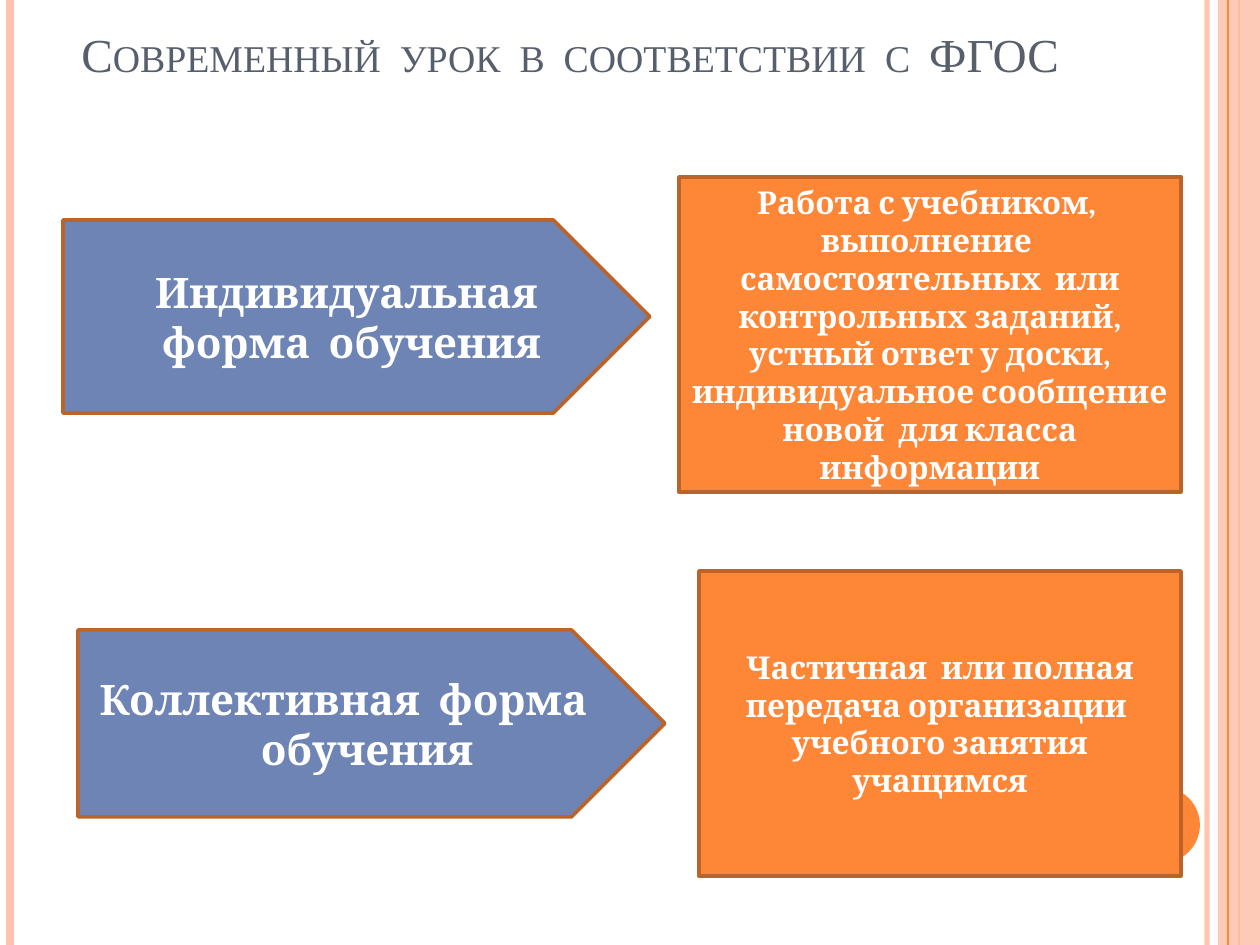
import pptx
import pptx.dml.color
import pptx.enum.shapes
import pptx.enum.text
import pptx.oxml.ns
import pptx.util
from lxml import etree

EMU_PER_PX = 914400 / 126
WIDTH, HEIGHT = 1260, 945
SHAPES = pptx.enum.shapes.MSO_SHAPE
ANCHORS = pptx.enum.text.MSO_ANCHOR
ALIGNMENTS = pptx.enum.text.PP_ALIGN


def px(length):
    return pptx.util.Emu(round(length * EMU_PER_PX))


def color(value):
    return pptx.dml.color.RGBColor.from_string(value)


def add_element(parent, tag, **attributes):
    return etree.SubElement(parent, pptx.oxml.ns.qn(tag), attributes)


def set_alpha(fill_parent, percent):
    """Make the solid fill found below an element partly transparent."""
    rgb = fill_parent.find(".//" + pptx.oxml.ns.qn("a:srgbClr"))
    add_element(rgb, "a:alpha", val=str(percent * 1000))


class SlideBuilder:
    ORANGE, PEACH, BLUE = "FE8637", "FEC3AE", "6E84B4"
    BORDER, WHITE, TITLE = "BC6329", "FFFFFF", "575F6D"
    BODY_FONT, TITLE_FONT = "Cambria", "Times New Roman"

    def __init__(self, slide):
        self.slide = slide

    def vertical_line(self, x, value, width, alpha=None):
        line = self.slide.shapes.add_connector(
            pptx.enum.shapes.MSO_CONNECTOR.STRAIGHT, px(x), 0, px(x), px(HEIGHT))
        line.line.color.rgb = color(value)
        line.line.width = pptx.util.Pt(width)
        properties = line._element.spPr
        if alpha:
            set_alpha(properties, alpha)
        add_element(properties, "a:effectLst")

    def shape(self, kind, box, fill, border=None, alpha=None):
        shape = self.slide.shapes.add_shape(kind, *map(px, box))
        shape.shadow.inherit = False
        shape.fill.solid()
        shape.fill.fore_color.rgb = color(fill)
        if alpha:
            set_alpha(shape._element.spPr, alpha)
        if border:
            shape.line.color.rgb = color(border)
            shape.line.width = pptx.util.Pt(2)
        else:
            shape.line.fill.background()
        return shape

    def fill_text(self, shape, text, value, anchor, alignment, **font_format):
        frame = shape.text_frame
        frame.word_wrap = True
        frame.vertical_anchor = anchor
        paragraph = frame.paragraphs[0]
        paragraph.alignment = alignment
        run = paragraph.add_run()
        run.text = text
        for name, setting in font_format.items():
            setattr(run.font, name, setting)
        run.font.color.rgb = color(value)
        return paragraph, run

    def title(self, box, text):
        text_box = self.slide.shapes.add_textbox(*map(px, box))
        _, run = self.fill_text(text_box, text, self.TITLE, ANCHORS.BOTTOM, ALIGNMENTS.LEFT,
                                name=self.TITLE_FONT, size=pptx.util.Pt(27))
        run.font._element.set("cap", "small")

    def panel(self, kind, box, fill, text, size):
        shape = self.shape(kind, box, fill, self.BORDER)
        paragraph, _ = self.fill_text(
            shape, text, self.WHITE, ANCHORS.MIDDLE, ALIGNMENTS.CENTER,
            name=self.BODY_FONT, size=pptx.util.Pt(size), bold=True)
        return paragraph

    def form_arrow(self, box, text, first_indent):
        paragraph = self.panel(SHAPES.PENTAGON, box, self.BLUE, text, 24)
        properties = paragraph._p.get_or_add_pPr()
        properties.set("marL", str(px(38)))
        properties.set("indent", str(px(first_indent)))

    def description(self, box, text):
        self.panel(SHAPES.RECTANGLE, box, self.ORANGE, text, 18)

    def decoration(self):
        self.vertical_line(1207, self.PEACH, 3, alpha=93)
        self.vertical_line(10, self.PEACH, 4.5)
        self.vertical_line(1239, self.ORANGE, 1.5)
        self.shape(SHAPES.RECTANGLE, (1218, 0, 42, HEIGHT), self.PEACH, alpha=87)
        self.vertical_line(1228, self.ORANGE, 0.75)
        self.shape(SHAPES.OVAL, (1124, 787, 76, 76), self.ORANGE)


def main():
    presentation = pptx.Presentation()
    presentation.slide_width, presentation.slide_height = px(WIDTH), px(HEIGHT)
    builder = SlideBuilder(presentation.slides.add_slide(presentation.slide_layouts[6]))
    builder.decoration()
    builder.title((69, 29, 1029, 59), "Современный  урок  в  соответствии  с  ФГОС")
    builder.form_arrow((63, 220, 587, 193), "Индивидуальная форма  обучения", -10)
    builder.form_arrow((78, 630, 587, 187), "Коллективная  форма  обучения", -38)
    builder.description(
        (679, 177, 502, 315),
        "Работа с учебником,  выполнение  самостоятельных  или контрольных заданий, "
        "устный ответ у доски, индивидуальное сообщение  новой  для класса  информации")
    builder.description(
        (699, 571, 482, 305),
        "Частичная  или полная передача организации  учебного занятия учащимся")
    presentation.save("out.pptx")


if __name__ == "__main__":
    main()
